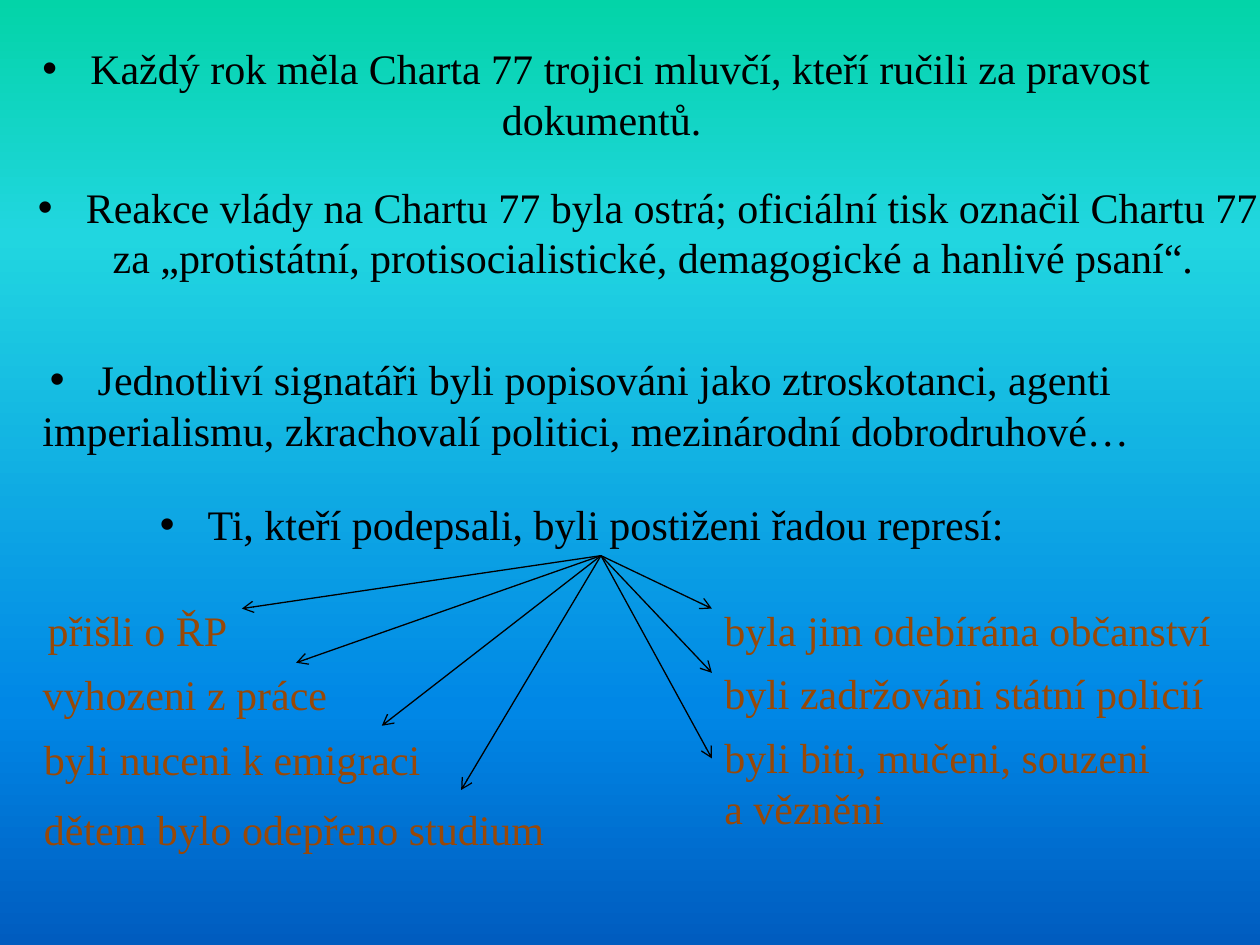
from lxml import etree
from pptx import Presentation
from pptx.dml.color import RGBColor
from pptx.enum.shapes import MSO_CONNECTOR
from pptx.enum.text import MSO_AUTO_SIZE, PP_ALIGN
from pptx.oxml.ns import qn
from pptx.util import Inches, Pt

STRAIGHT = MSO_CONNECTOR.STRAIGHT
GROW = MSO_AUTO_SIZE.SHAPE_TO_FIT_TEXT
LEFT, CENTER = PP_ALIGN.LEFT, PP_ALIGN.CENTER
COLORS = {"text": "000000", "reprisal": "984807"}
SKY = [(0, "03D4A8"), (25, "21D6E0"), (75, "0087E6"), (100, "005CBF")]
FONT = {"name": "Times New Roman", "size": Pt(24)}

prs = Presentation()
prs.slide_width, prs.slide_height = Inches(10), Inches(7.5)
s = prs.slides.add_slide(prs.slide_layouts[6])
U = prs.slide_width / 100  # square grid of 100 columns by 75 rows
LINE_H = {1: 5, 2: 9.1}    # box height in rows for one or two lines


def sub(parent, tag, **attrs):
    return etree.SubElement(parent, qn(tag), attrs)


def add_text(col, row, width, lines, color, align=LEFT, bullet=False, wrap=False):
    box = [round(v * U) for v in (col, row, width, LINE_H[len(lines)])]
    sp = s.shapes.add_textbox(*box)
    tf = sp.text_frame
    tf.word_wrap, tf.auto_size = wrap, GROW
    for i, line in enumerate(lines):
        p = tf.add_paragraph() if i else tf.paragraphs[0]
        p.alignment = align
        r = p.add_run()
        r.text = line
        for name, value in FONT.items():
            setattr(r.font, name, value)
        r.font.color.rgb = RGBColor.from_string(COLORS[color])
        if bullet and i == 0:
            pPr = p._p.get_or_add_pPr()
            pPr.set("marL", str(Inches(0.38)))
            pPr.set("indent", str(-Inches(0.38)))
            sub(pPr, "a:buFont", typeface="Arial")
            sub(pPr, "a:buChar", char="•")
    return sp


# Background gradient, top to bottom
fill = s.background.fill
fill.gradient()
grad = s.background._cSld.find(".//" + qn("a:gradFill"))
for child in list(grad):
    grad.remove(child)
stops = sub(grad, "a:gsLst")
for pos, color in SKY:
    sub(sub(stops, "a:gs", pos=str(pos * 1000)), "a:srgbClr", val=color)
sub(grad, "a:lin", ang="5400000", scaled="0")

# Statements
for col, row, width, lines in [
    (2, 2.9, 91.5, ["Každý rok měla Charta 77 trojici mluvčí, kteří ručili za pravost ",
                    "dokumentů."]),
    (2, 13.9, 99.7, ["Reakce vlády na Chartu 77 byla ostrá; oficiální tisk označil Chartu 77 ",
                     "za „protistátní, protisocialistické, demagogické a hanlivé psaní“."]),
    (2, 27.6, 89, ["Jednotliví signatáři byli popisováni jako ztroskotanci, agenti ",
                   "imperialismu, zkrachovalí politici, mezinárodní dobrodruhové…"]),
]:
    add_text(col, row, width, lines, "text", CENTER, bullet=True)
lead = add_text(11.7, 39.1, 72, ["Ti, kteří podepsali, byli postiženi řadou represí:"],
                "text", bullet=True)

# Reprisals: text position, lines, and the arrow's end point
RIGHT = 56.5
for col, row, width, lines, end in [
    (2.8, 47.5, 16.4, ["přišli o ŘP"], (19.2, 48.3)),
    (2.4, 52.6, 24.8, ["vyhozeni z práce"], (23.5, 52.6)),
    (2.5, 57.7, 32.2, ["byli nuceni k emigraci"], (30.3, 57.6)),
    (2.5, 63.3, 42.1, ["dětem bylo odepřeno studium"], (36.6, 62.7)),
    (RIGHT, 47.5, 41.6, ["byla jim odebírána občanství"], (RIGHT, 48.3)),
    (RIGHT, 52.5, 40.4, ["byli zadržováni státní policií"], (RIGHT, 53.4)),
    (RIGHT, 57.6, 36.9, ["byli biti, mučeni, souzeni", "a vězněni"], (RIGHT, 60.2)),
]:
    add_text(col, row, width, lines, "reprisal", wrap=row == 47.5 and col == RIGHT)
    x, y = (round(v * U) for v in end)
    arrow = s.shapes.add_connector(STRAIGHT, 0, 0, x, y)
    arrow.begin_connect(lead, 2)
    arrow.line.width = Pt(0.75)
    arrow.line.color.rgb = RGBColor.from_string(COLORS["text"])
    sub(arrow.line._get_or_add_ln(), "a:tailEnd", type="arrow")
    sub(arrow._element.spPr, "a:effectLst")

prs.save("out.pptx")
